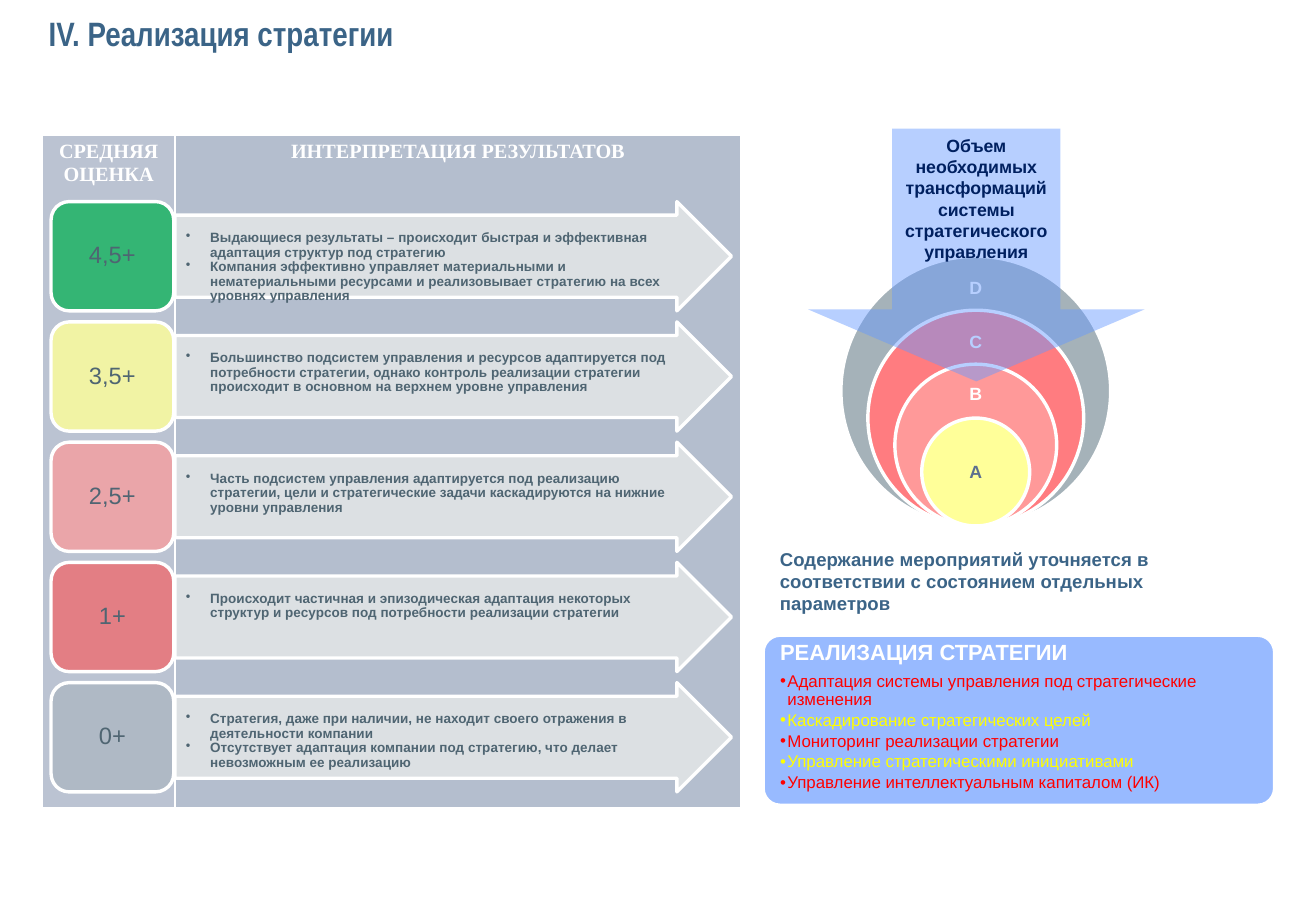
from pptx import Presentation
from pptx.dml.color import RGBColor
from pptx.enum.shapes import MSO_SHAPE
from pptx.enum.text import MSO_ANCHOR, MSO_AUTO_SIZE, PP_ALIGN
from pptx.oxml.ns import qn
from pptx.util import Inches, Pt
from lxml.etree import SubElement

COLORS = {
    "white": "FFFFFF", "blue": "3B6487", "navy": "002060", "slate": "4F6572",
    "table": "A1ADC1", "arrow": "E1E4E6", "green": "00B050", "yellow": "FFFF99",
    "pink": "FF9999", "coral": "FF5050", "gray": "A5B1B9", "ring": "A5B2B9",
    "rose": "FF7C80", "steel": "5D708F", "sky": "6699FF",
    "red": "FF0000", "lemon": "FFFF00",
}
TITLE = "IV. Реализация стратегии"
HEADS = [  # text, column width, fill opacity in percent
    ("СРЕДНЯЯ ОЦЕНКА", 1.09, 72),
    ("ИНТЕРПРЕТАЦИЯ РЕЗУЛЬТАТОВ", 4.66, 79),
]
GRADES = [  # score, colour, opacity in percent, meaning
    ("4,5+", "green", 72, [
        "Выдающиеся результаты – происходит быстрая и эффективная адаптация структур под стратегию",
        "Компания эффективно управляет материальными и нематериальными ресурсами и "
        "реализовывает стратегию на всех уровнях управления"]),
    ("3,5+", "yellow", 80, [
        "Большинство подсистем управления и ресурсов адаптируется под потребности стратегии, "
        "однако контроль реализации стратегии происходит в основном на верхнем уровне управления"]),
    ("2,5+", "pink", 70, [
        "Часть подсистем управления адаптируется под реализацию стратегии, цели и "
        "стратегические задачи каскадируются на нижние уровни управления"]),
    ("1+", "coral", 60, [
        "Происходит частичная и эпизодическая адаптация некоторых структур и ресурсов "
        "под потребности реализации стратегии"]),
    ("0+", "gray", 50, [
        "Стратегия, даже при наличии, не находит своего отражения в деятельности компании",
        "Отсутствует адаптация компании под стратегию, что делает невозможным ее реализацию"]),
]
RINGS = [  # letter, fill, text colour, middle of the letter
    ("D", "ring", "white", 2.38),
    ("C", "rose", "white", 2.82),
    ("B", "pink", "white", 3.25),
    ("A", "yellow", "steel", 3.89),
]
VOLUME = ["Объем", "необходимых", "трансформаций", "системы", "стратегического", "управления"]
NOTE = "Содержание мероприятий уточняется в соответствии с состоянием отдельных параметров"
PLAN = "РЕАЛИЗАЦИЯ СТРАТЕГИИ"
TASKS = [
    ("Адаптация системы управления под стратегические изменения", "red"),
    ("Каскадирование стратегических целей", "lemon"),
    ("Мониторинг реализации стратегии", "red"),
    ("Управление стратегическими инициативами", "lemon"),
    ("Управление интеллектуальным капиталом (ИК)", "red"),
]


def rgb(name):
    return RGBColor.from_string(COLORS[name])


def paint(fill, color, alpha=100):
    """Fill solidly, with opacity in percent."""
    fill.solid()
    fill.fore_color.rgb = rgb(color)
    if alpha < 100:
        tone = fill._xPr.find(qn("a:solidFill")).find(qn("a:srgbClr"))
        SubElement(tone, qn("a:alpha")).set("val", str(alpha * 1000))


def add_form(kind, box, color, alpha=100, line=True):
    form = slide.shapes.add_shape(kind, *map(Inches, box))
    form.shadow.inherit = False
    paint(form.fill, color, alpha)
    if line:
        form.line.color.rgb = rgb("white")
        form.line.width = Pt(2)
    else:
        form.line.fill.background()
    return form


def set_frame(frame, insets, anchor=MSO_ANCHOR.TOP, wrap=True):
    frame.margin_left, frame.margin_top, frame.margin_right, frame.margin_bottom = map(Inches, insets)
    frame.vertical_anchor = anchor
    frame.word_wrap = wrap
    frame.auto_size = MSO_AUTO_SIZE.NONE


def write(frame, lines, size, color, bold=True, align=PP_ALIGN.LEFT,
          font="Arial", space=1, after=0, hang=None):
    """Add paragraphs; hang is (left margin, bullet outdent) for a bulleted list."""
    for text in lines:
        para = frame.paragraphs[0]
        if para.text:
            para = frame.add_paragraph()
        para.text = text
        para.alignment = align
        props = para._p.get_or_add_pPr()
        left, out = hang or (0, 0)
        props.set("marL", str(Inches(left)))
        props.set("indent", str(-Inches(out)))
        if hang:
            SubElement(props, qn("a:buChar")).set("char", "•")
        else:
            SubElement(props, qn("a:buNone"))
        para.line_spacing = space
        para.space_before = Pt(0)
        para.space_after = Pt(after)
        para.font.name = font
        para.font.size = Pt(size)
        para.font.bold = bold
        para.font.color.rgb = rgb(color)


def place(shape, box):
    shape.left, shape.top, shape.width, shape.height = map(Inches, box)


def add_label(box, insets, anchor=MSO_ANCHOR.TOP):
    frame = slide.shapes.add_textbox(*map(Inches, box)).text_frame
    set_frame(frame, insets, anchor)
    return frame


deck = Presentation()
deck.slide_width, deck.slide_height = Inches(10.83), Inches(7.5)
slide = deck.slides.add_slide(deck.slide_layouts[1])
title, body = slide.placeholders

place(title, (0.3, 0.02, 9.19, 0.51))
set_frame(title.text_frame, (0.1, 0.05, 0.1, 0.05), MSO_ANCHOR.MIDDLE)
write(title.text_frame, [TITLE], 20, "blue", font="Arial Narrow")

# Score table
table = slide.shapes.add_table(1, 2, *map(Inches, (0.35, 1.11, 5.75, 5.54))).table
for col, (text, width, alpha) in enumerate(HEADS):
    table.columns[col].width = Inches(width)
    cell = table.cell(0, col)
    paint(cell.fill, "table", alpha)
    write(cell.text_frame, [text], 12, "white", align=PP_ALIGN.CENTER, font="Times New Roman")

HIGH, STEP = 0.9, 0.99
for row, (score, color, alpha, lines) in enumerate(GRADES):
    top = 1.66 + row * STEP
    arrow = add_form(MSO_SHAPE.RIGHT_ARROW, (1.44, top, 4.58, HIGH), "arrow", 90)
    arrow.adjustments[0] = 0.75
    set_frame(arrow.text_frame, (0.01, 0.13, 0.01, 0))
    write(arrow.text_frame, lines, 8, "slate", space=0.9, hang=(0.28, 0.2))
    badge = add_form(MSO_SHAPE.ROUNDED_RECTANGLE, (0.42, top, 1.01, HIGH), color, alpha)
    set_frame(badge.text_frame, (0.06, 0.03, 0.06, 0.03), MSO_ANCHOR.MIDDLE)
    write(badge.text_frame, [score], 14, "slate", False, PP_ALIGN.CENTER, space=0.9)

# Nested circles share their lowest point
MID, BASE, UNIT = 8.03, 4.33, 0.444
for row, (letter, color, ink, level) in enumerate(RINGS):
    size = UNIT * (5 - row)
    add_form(MSO_SHAPE.OVAL, (MID - size / 2, BASE - size, size, size), color)
    label = add_label((MID - 0.31, level - 0.16, 0.62, 0.32), (0.09, 0.05, 0.09, 0.05), MSO_ANCHOR.MIDDLE)
    write(label, [letter], 10.5, ink, align=PP_ALIGN.CENTER, space=0.9)

note = add_label((6.32, 4.46, 3.56, 0.98), (0.1, 0.05, 0.1, 0.05))
write(note, [NOTE], 11, "blue")

drop = add_form(MSO_SHAPE.DOWN_ARROW, (6.65, 1.06, 2.77, 2.08), "sky", 47, line=False)
drop.adjustments[1] = 0.285
set_frame(drop.text_frame, (0.1, 0.05, 0.1, 0.05), wrap=False)
write(drop.text_frame, VOLUME, 10.5, "navy", align=PP_ALIGN.CENTER)

# Task list on its panel
panel = add_form(MSO_SHAPE.ROUNDED_RECTANGLE, (6.28, 5.23, 4.21, 1.4), "sky", 67)
panel.adjustments[0] = 0.1
panel._element.addnext(body._element)
place(body, (6.37, 5.23, 4.12, 1.4))
set_frame(body.text_frame, (0.05, 0.05, 0.05, 0.05))
write(body.text_frame, [PLAN], 13, "white", space=0.9, after=4.5)
for text, color in TASKS:
    write(body.text_frame, [text], 10, color, False, space=0.9, after=1.5, hang=(0.06, 0.06))

deck.save("out.pptx")
